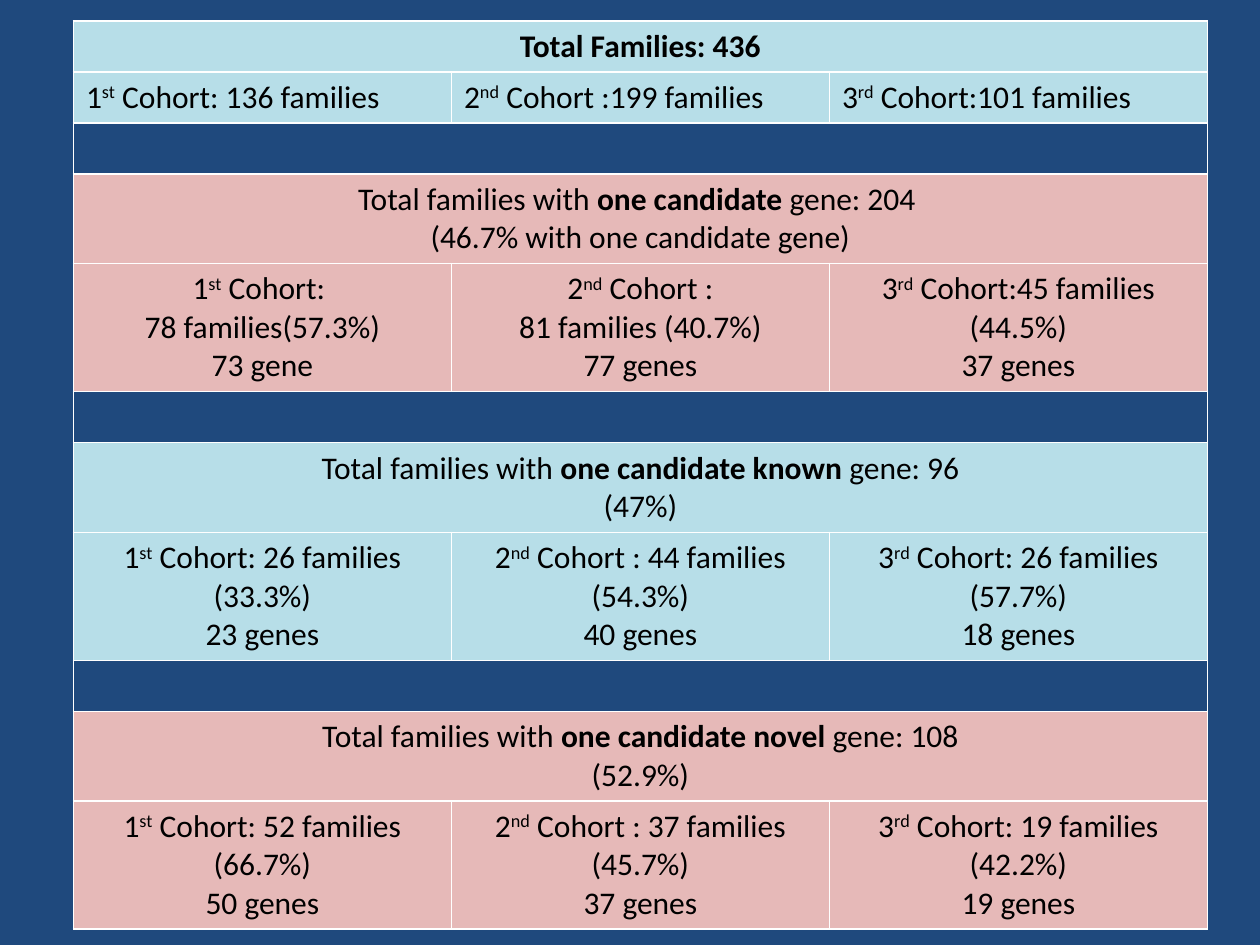
from dataclasses import dataclass

import pptx
import pptx.dml.color
import pptx.enum.text
import pptx.oxml
import pptx.oxml.ns
import pptx.util
from pptx.util import Cm

RGB = pptx.dml.color.RGBColor.from_string
ALIGN = pptx.enum.text.PP_ALIGN


@dataclass(frozen=True)
class Theme:
    background: str = "1F497D"
    blue: str = "B7DEE8"
    pink: str = "E6B9B8"
    text: str = "000000"
    border: str = "FFFFFF"
    font: str = "Calibri"
    size: int = 18
    border_width: int = 1


THEME = Theme()
ORDINALS = (("1", "st"), ("2", "nd"), ("3", "rd"))
COLUMN_WIDTH = 7.62
LINE_HEIGHT, CELL_PADDING = 0.775, 0.25

# Heading parts (plain, bold, plain), share, then the lines of each cohort
GROUPS = (
    (THEME.pink, ("Total families with ", "one candidate ", "gene: 204 "),
     "(46.7% with one candidate gene)",
     ((" Cohort: ", "78 families(57.3%)", "73 gene"),
      (" Cohort :", "81 families (40.7%)", "77 genes"),
      (" Cohort:45 families", "(44.5%)", "37 genes"))),
    (THEME.blue, ("Total families with ", "one candidate known ", "gene: 96"),
     "(47%)",
     ((" Cohort: 26 families", "(33.3%)", "23 genes"),
      (" Cohort : 44 families", "(54.3%)", "40 genes"),
      (" Cohort: 26 families", "(57.7%)", "18 genes"))),
    (THEME.pink, ("Total families with ", "one candidate novel ", "gene: 108"),
     "(52.9%)",
     ((" Cohort: 52 families", "(66.7%)", "50 genes"),
      (" Cohort : 37 families", "(45.7%)", "37 genes"),
      (" Cohort: 19 families", "(42.2%)", "19 genes"))),
)
TOTALS = ((" Cohort: 136 families",), (" Cohort :199 families",),
          (" Cohort:101 families",))


def cohort_cells(cohorts):
    """Put the ordinal before the first line of each cohort."""
    return [[[(number, ""), (suffix, "super"), (first, "")],
             *([(line, "")] for line in rest)]
            for (number, suffix), (first, *rest) in zip(ORDINALS, cohorts)]


def table_rows():
    """List rows as (fill, alignment, cells); a cell is a list of paragraphs."""
    rows = [(THEME.blue, ALIGN.CENTER, [[[("Total Families: 436", "bold")]]]),
            (THEME.blue, ALIGN.LEFT, cohort_cells(TOTALS))]
    for fill, (before, strong, after), share, cohorts in GROUPS:
        heading = [(before, ""), (strong, "bold"), (after, "")]
        rows += [(None, ALIGN.CENTER, [[[]]]),
                 (fill, ALIGN.CENTER, [[heading, [(share, "")]]]),
                 (fill, ALIGN.CENTER, cohort_cells(cohorts))]
    return rows


def set_borders(cell):
    tcPr = cell._tc.get_or_add_tcPr()
    width = pptx.util.Pt(THEME.border_width)
    for i, side in enumerate(("lnL", "lnR", "lnT", "lnB")):
        tcPr.insert(i, pptx.oxml.parse_xml(
            f'<a:{side} {pptx.oxml.ns.nsdecls("a")} w="{width}"><a:solidFill>'
            f'<a:srgbClr val="{THEME.border}"/></a:solidFill></a:{side}>'))


def set_fill(cell, color):
    if color:
        cell.fill.solid()
        cell.fill.fore_color.rgb = RGB(color)
    else:
        cell.fill.background()


def add_run(p, text, style):
    r = p.add_run()
    r.text = text
    formats = {"name": THEME.font, "size": pptx.util.Pt(THEME.size),
               "bold": style == "bold"}
    for name, value in formats.items():
        setattr(r.font, name, value)
    r.font.color.rgb = RGB(THEME.text)
    if style == "super":
        r._r.get_or_add_rPr().set("baseline", "30000")


def write_cell(cell, paragraphs, alignment):
    tf = cell.text_frame
    for i, runs in enumerate(paragraphs):
        p = tf.add_paragraph() if i else tf.paragraphs[0]
        p.alignment = alignment
        for text, style in runs:
            add_run(p, text, style)


def add_family_table(s):
    rows = table_rows()
    columns = len(ORDINALS)
    table = s.shapes.add_table(len(rows), columns, Cm(1.48), Cm(0.42),
                               Cm(columns * COLUMN_WIDTH), Cm(18.29)).table
    table.first_row = table.horz_banding = False
    for column in table.columns:
        column.width = Cm(COLUMN_WIDTH)
    for i, (fill, alignment, cells) in enumerate(rows):
        lines = max(len(paragraphs) for paragraphs in cells)
        table.rows[i].height = Cm(CELL_PADDING + lines * LINE_HEIGHT)
        for j in range(columns):
            set_fill(table.cell(i, j), fill)
            set_borders(table.cell(i, j))
        if len(cells) == 1:
            table.cell(i, 0).merge(table.cell(i, columns - 1))
        for j, paragraphs in enumerate(cells):
            write_cell(table.cell(i, j), paragraphs, alignment)


def main():
    prs = pptx.Presentation()
    prs.slide_width, prs.slide_height = Cm(25.4), Cm(19.05)
    s = prs.slides.add_slide(prs.slide_layouts[6])
    s.background.fill.solid()
    s.background.fill.fore_color.rgb = RGB(THEME.background)
    add_family_table(s)
    prs.save("out.pptx")


if __name__ == "__main__":
    main()
